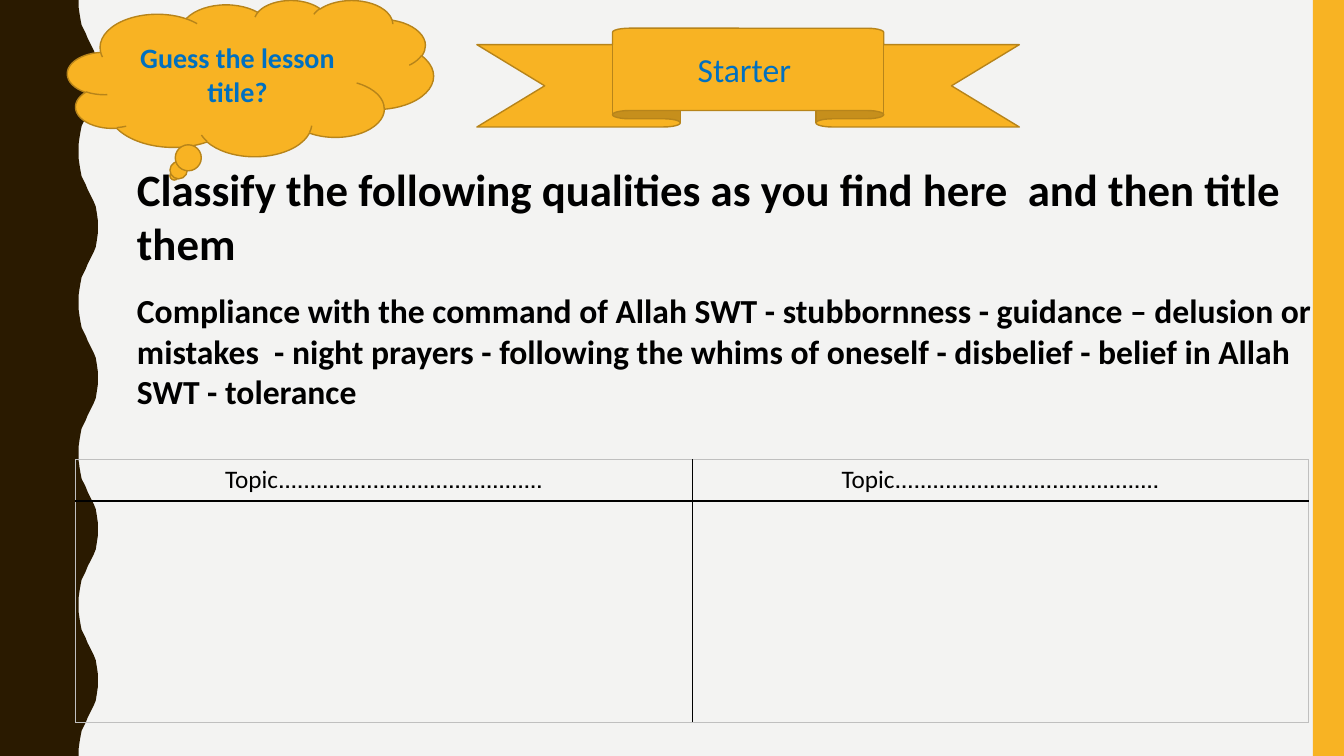
from lxml import etree
from pptx import Presentation
from pptx import util as u
from pptx.dml.color import RGBColor
from pptx.enum import shapes, text
from pptx.oxml import ns

GOLD, GOLD_EDGE, BROWN = "F8B323", "B7841A", "2A1A00"
BLACK, BLUE, GREY, PAPER = "000000", "0070C0", "BFBFBF", "F3F3F2"


def rgb(value):
    return RGBColor.from_string(value)


class LessonSlide:
    font = "Calibri"

    def __init__(self, prs, background):
        self.s = prs.slides.add_slide(prs.slide_layouts[6])
        self.s.background.fill.solid()
        self.s.background.fill.fore_color.rgb = rgb(background)

    def paint(self, sp, fill, line=None):
        sp.shadow.inherit = False
        sp.fill.solid()
        sp.fill.fore_color.rgb = rgb(fill)
        if line:
            sp.line.color.rgb = rgb(line)
            sp.line.width = u.Pt(1)
        else:
            sp.line.fill.background()

    def label(self, tf, words, size, color, bold=False, align=None):
        p = tf.paragraphs[0]
        r = p.add_run()
        r.text = words
        p.alignment = align
        p.font.name, p.font.size, p.font.bold = self.font, u.Pt(size), bold
        p.font.color.rgb = rgb(color)
        return p

    def shape(self, kind, box, fill, line=None, words=None, size=24, bold=False):
        sp = self.s.shapes.add_shape(kind, *map(u.Inches, box))
        self.paint(sp, fill, line)
        if words:
            tf = sp.text_frame
            tf.vertical_anchor = text.MSO_ANCHOR.MIDDLE
            self.label(tf, words, size, BLUE, bold, text.PP_ALIGN.CENTER)

    def outline(self, points, fill):
        emu = [(u.Inches(x), u.Inches(y)) for x, y in points]
        builder = self.s.shapes.build_freeform(*emu[0])
        builder.add_line_segments(emu[1:], close=True)
        self.paint(builder.convert_to_shape(), fill)

    def textbox(self, box, words, size):
        tf = self.s.shapes.add_textbox(*map(u.Inches, box)).text_frame
        tf.word_wrap = True
        self.label(tf, words, size, BLACK, bold=True)

    def borders(self, cell, colors):
        tcPr = cell._tc.get_or_add_tcPr()
        for i, (side, color) in enumerate(zip("LRTB", colors)):
            ln = etree.Element(ns.qn(f"a:ln{side}"), w=str(u.Pt(1)))
            fill = etree.SubElement(ln, ns.qn("a:solidFill"))
            etree.SubElement(fill, ns.qn("a:srgbClr"), val=color)
            tcPr.insert(i, ln)

    def table(self, box, heads, heights):
        rows, cols = len(heights), len(heads)
        table = self.s.shapes.add_table(rows, cols, *map(u.Inches, box)).table
        table.first_row = table.horz_banding = False
        for row, height in zip(table.rows, heights):
            row.height = u.Inches(height)
        for i in range(rows):
            for j in range(cols):
                cell = table.cell(i, j)
                cell.fill.background()
                # Grey frame outside, black rules inside
                outer = (j == 0, j == cols - 1, i == 0, i == rows - 1)
                self.borders(cell, [GREY if edge else BLACK for edge in outer])
                if i == 0:
                    p = self.label(cell.text_frame, heads[j], 18, BLACK,
                                   align=text.PP_ALIGN.CENTER)
                    p._p.get_or_add_pPr().set("rtl", "1")


def wavy_edge(period=1.5, waves=5):
    """Points down the right edge of the side band."""
    half = [(0.78, 0), (0.78, 0.07), (0.79, 0.14), (0.8, 0.2), (0.81, 0.25),
            (0.83, 0.29), (0.85, 0.33), (0.87, 0.38), (0.89, 0.42), (0.91, 0.46),
            (0.93, 0.5), (0.95, 0.55), (0.96, 0.61), (0.97, 0.68), (0.97, 0.75)]
    wave = half + [(x, period - y) for x, y in half[-2:0:-1]]
    edge = [(x, y + n * period) for n in range(waves) for x, y in wave]
    return edge + [(half[0][0], waves * period)]


def main():
    prs = Presentation()
    prs.slide_width, prs.slide_height = u.Inches(13.33), u.Inches(7.5)
    slide = LessonSlide(prs, PAPER)
    kinds = shapes.MSO_SHAPE

    # Side bands
    slide.outline([(0, 0), *wavy_edge(), (0, 7.5)], BROWN)
    slide.shape(kinds.RECTANGLE, (13.02, 0, 0.31, 7.5), GOLD)

    # Task
    slide.textbox((1.26, 1.56, 11.55, 1.18),
                  "Classify the following qualities as you find here  and then title them", 32)
    slide.textbox((1.26, 2.83, 11.88, 1.31),
                  "Compliance with the command of Allah SWT - stubbornness - guidance – "
                  "delusion or mistakes  - night prayers - following the whims of oneself - "
                  "disbelief - belief in Allah SWT - tolerance", 24)

    # Sorting table, headings set right to left
    slide.table((0.75, 4.56, 12.23, 2.61), ["." * 42 + "Topic"] * 2, (0.41, 2.2))

    # Ribbon and thought cloud
    slide.shape(kinds.UP_RIBBON, (4.73, 0.28, 5.38, 0.98), GOLD, GOLD_EDGE, "Starter ")
    slide.shape(kinds.CLOUD_CALLOUT, (0.67, 0, 3.63, 1.55), GOLD, GOLD_EDGE,
                "Guess the lesson title?", 20, bold=True)

    prs.save("out.pptx")


if __name__ == "__main__":
    main()
